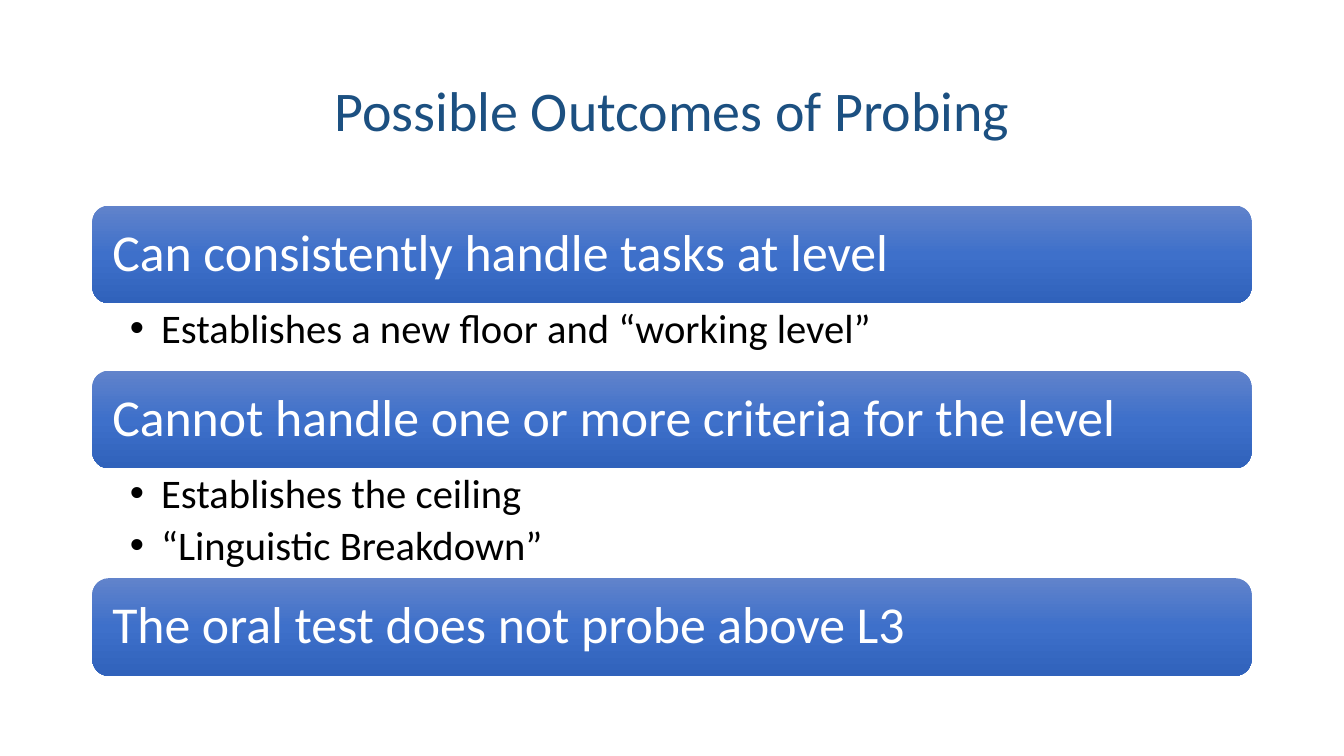
from dataclasses import dataclass
from copy import deepcopy

from lxml.etree import SubElement
from pptx import Presentation
from pptx.dml.color import RGBColor as Rgb
from pptx.enum.shapes import MSO_SHAPE as Kind
from pptx.enum.text import MSO_ANCHOR as Anchor, MSO_AUTO_SIZE as Fit, PP_ALIGN as Align
from pptx.oxml.ns import qn
from pptx.shapes.autoshape import Shape
from pptx.slide import Slide
from pptx.text.text import TextFrame, _Paragraph as Para
from pptx.util import Cm, Pt


@dataclass(frozen=True)
class Theme:
    font: str = "Calibri"
    title: Rgb = Rgb(0x1C, 0x50, 0x81)
    head: Rgb = Rgb(0xFF, 0xFF, 0xFF)
    item: Rgb = Rgb(0, 0, 0)
    fade: tuple[str, ...] = ("6183CB", "3E70CA", "3062BB")
    title_size: int = 40
    head_size: int = 37
    item_size: int = 29


@dataclass(frozen=True)
class Outcome:
    head: str
    items: tuple[str, ...] = ()
    depth: float = 0  # height of the list in cm


THEME = Theme()
LEFT, WIDTH = Cm(2.33), Cm(29.21)
TOP, BAR = 5.18, 2.46
INDENT = Cm(0.79)

OUTCOMES = (
    Outcome("Can consistently handle tasks at level",
            ("Establishes a new floor and “working level”",), 1.7),
    Outcome("Cannot handle one or more criteria for the level",
            ("Establishes the ceiling", "“Linguistic Breakdown”"), 2.77),
    Outcome("The oral test does not probe above L3"),
)


def place(shape: Shape, top: float, height: float) -> None:
    shape.left, shape.top = LEFT, Cm(top)
    shape.width, shape.height = WIDTH, Cm(height)


def frame(shape: Shape, anchor: Anchor, left: float, right: float, edge: float) -> TextFrame:
    """Set up the text area of a shape; insets are in cm."""
    text = shape.text_frame
    text.word_wrap, text.auto_size = True, Fit.NONE
    text.vertical_anchor = anchor
    text.margin_left, text.margin_right = Cm(left), Cm(right)
    text.margin_top = text.margin_bottom = Cm(edge)
    return text


def write(para: Para, words: str, size: int, color: Rgb,
          align: Align = Align.LEFT, after: float = 0) -> None:
    """Add one run; after is a share of the type size."""
    para.alignment, para.line_spacing = align, 0.9
    para.space_before, para.space_after = Pt(0), Pt(size * after)
    run = para.add_run()
    run.text = words
    run.font.name, run.font.size = THEME.font, Pt(size)
    run.font.color.rgb = color


def bullet(para: Para) -> None:
    props = para._p.get_or_add_pPr()
    props.set("marL", str(INDENT))
    props.set("indent", str(-INDENT))
    SubElement(props, qn("a:buFont")).set("typeface", "Arial")
    SubElement(props, qn("a:buChar")).set("char", "•")


def shade(shape: Shape) -> None:
    """Fill from top to bottom with evenly spaced theme colours."""
    fill = shape.fill
    fill.gradient()
    fill.gradient_angle = 270
    stops = shape.element.spPr.find(qn("a:gradFill")).find(qn("a:gsLst"))
    while len(stops) < len(THEME.fade):
        stops.append(deepcopy(stops[0]))
    for i, (stop, color) in enumerate(zip(fill.gradient_stops, THEME.fade)):
        stop.position = i / (len(THEME.fade) - 1)
        stop.color.rgb = Rgb.from_string(color)


def add_bar(slide: Slide, words: str, top: float) -> None:
    bar = slide.shapes.add_shape(Kind.ROUNDED_RECTANGLE, LEFT, Cm(top), WIDTH, Cm(BAR))
    bar.shadow.inherit = False
    bar.line.fill.background()
    shade(bar)
    text = frame(bar, Anchor.MIDDLE, 0.38, 0.38, 0.38)
    write(text.paragraphs[0], words, THEME.head_size, THEME.head)


def fill_list(body: Shape, items: tuple[str, ...], top: float, height: float) -> None:
    place(body, top, height)
    text = frame(body, Anchor.TOP, 0.94, 0.74, 0.13)
    for i, item in enumerate(items):
        para = text.add_paragraph() if i else text.paragraphs[0]
        para.level = 1
        write(para, item, THEME.item_size, THEME.item, after=0.2)
        bullet(para)


def main() -> None:
    deck = Presentation()
    deck.slide_width, deck.slide_height = Cm(33.87), Cm(19.05)
    slide = deck.slides.add_slide(deck.slide_layouts.get_by_name("Two Content"))
    title, *bodies = slide.placeholders

    place(title, 1.01, 3.68)
    text = frame(title, Anchor.MIDDLE, 0.25, 0.25, 0.13)
    write(text.paragraphs[0], "Possible Outcomes of Probing",
          THEME.title_size, THEME.title, Align.CENTER)

    free = iter(bodies)
    top = TOP
    for outcome in OUTCOMES:
        add_bar(slide, outcome.head, top)
        top += BAR
        if outcome.items:
            fill_list(next(free), outcome.items, top, outcome.depth)
            top += outcome.depth

    deck.save("out.pptx")


if __name__ == "__main__":
    main()
